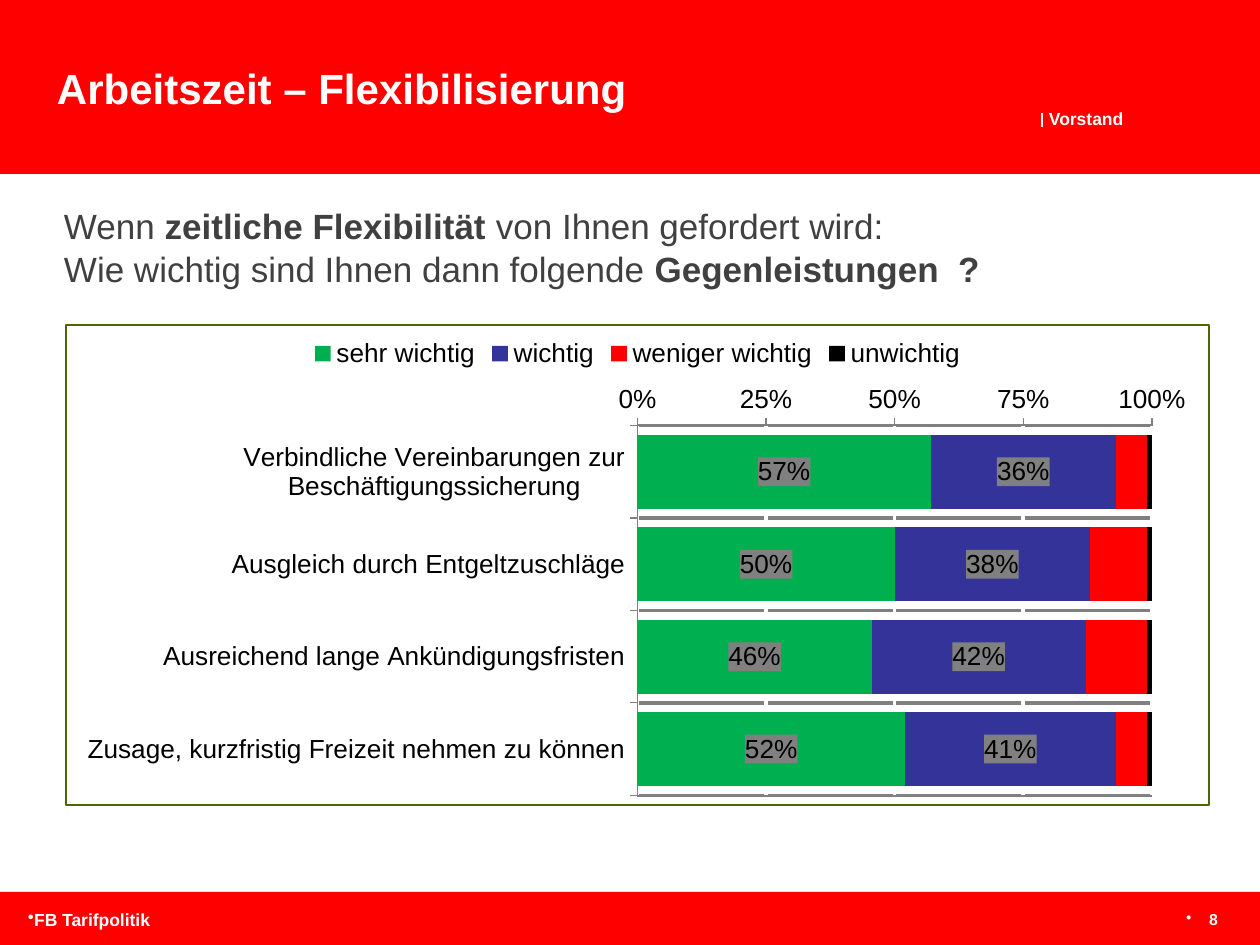
from dataclasses import dataclass

from lxml import etree
from pptx import Presentation
from pptx.chart.data import CategoryChartData
from pptx.dml.color import RGBColor
from pptx.enum.chart import (XL_CHART_TYPE, XL_LABEL_POSITION, XL_LEGEND_POSITION,
                             XL_TICK_LABEL_POSITION, XL_TICK_MARK)
from pptx.enum.shapes import MSO_CONNECTOR, MSO_SHAPE
from pptx.enum.text import PP_ALIGN
from pptx.oxml import parse_xml
from pptx.oxml.ns import nsdecls, qn
from pptx.util import Pt

EMU_PER_PX = 914400 / 126
STACKED_100 = XL_CHART_TYPE.BAR_STACKED_100
LEGEND_TOP = XL_LEGEND_POSITION.TOP
LABEL_CENTER = XL_LABEL_POSITION.CENTER
TICKS_LOW = XL_TICK_LABEL_POSITION.LOW
TICK_OUT, TICK_NONE = XL_TICK_MARK.OUTSIDE, XL_TICK_MARK.NONE
LEFT, RIGHT = PP_ALIGN.LEFT, PP_ALIGN.RIGHT
RECTANGLE, STRAIGHT = MSO_SHAPE.RECTANGLE, MSO_CONNECTOR.STRAIGHT


@dataclass(frozen=True)
class Theme:
    font: str = "Arial"
    red: str = "FF0000"
    white: str = "FFFFFF"
    question: str = "404040"
    black: str = "000000"
    green: str = "00B050"
    blue: str = "333399"
    grey: str = "808080"
    frame: str = "4C6600"
    title_size: int = 24
    question_size: int = 20
    chart_size: int = 15
    small_size: int = 10
    page_size: int = 9


THEME = Theme()

CATEGORIES = [
    "Verbindliche Vereinbarungen zur Beschäftigungssicherung",
    "Ausgleich durch Entgeltzuschläge",
    "Ausreichend lange Ankündigungsfristen",
    "Zusage, kurzfristig Freizeit nehmen zu können",
]
# name, values, colour, labelled
RATINGS = [
    ("sehr wichtig", (0.57, 0.50, 0.46, 0.52), THEME.green, True),
    ("wichtig", (0.36, 0.38, 0.42, 0.41), THEME.blue, True),
    ("weniger wichtig", (0.06, 0.11, 0.12, 0.06), THEME.red, False),
    ("unwichtig", (0.01, 0.01, 0.01, 0.01), THEME.black, False),
]


def px(*lengths):
    return [round(length * EMU_PER_PX) for length in lengths]


def apply_format(target, **values):
    for name, value in values.items():
        setattr(target, name, value)


def set_font(font, size, color, bold=False):
    apply_format(font, name=THEME.font, size=Pt(size), bold=bold)
    font.color.rgb = RGBColor.from_string(color)


def set_line(line, color, width):
    line.color.rgb = RGBColor.from_string(color)
    line.width = Pt(width)


def add_band(slide, top, height):
    band = slide.shapes.add_shape(RECTANGLE, *px(0, top, 1260, height))
    band.shadow.inherit = False
    band.fill.solid()
    band.fill.fore_color.rgb = RGBColor.from_string(THEME.red)
    band.line.fill.background()


def add_divider(slide, x, top, bottom):
    divider = slide.shapes.add_connector(STRAIGHT, *px(x, top, x, bottom))
    set_line(divider.line, THEME.white, 0.8)
    etree.SubElement(divider._element.spPr, qn("a:effectLst"))


def add_text(slide, box, lines, size, color=THEME.white, spacing=None,
             align=LEFT, insets=(0, 0), wrap=False, bullet_indent=None):
    """Each line is a list of (text, bold) pieces."""
    frame = slide.shapes.add_textbox(*px(*box)).text_frame
    side, edge = px(*insets)
    apply_format(frame, word_wrap=wrap, margin_left=side, margin_right=side,
                 margin_top=edge, margin_bottom=edge)
    paragraph = frame.paragraphs[0]
    apply_format(paragraph, alignment=align, line_spacing=spacing and Pt(spacing))
    if bullet_indent is not None:
        properties = paragraph._p.get_or_add_pPr()
        indent = px(bullet_indent)[0]
        properties.set("marL", str(indent))
        properties.set("indent", str(-indent))
        etree.SubElement(properties, qn("a:buChar"), char="•")
    for number, pieces in enumerate(lines):
        if number:
            paragraph.add_line_break()
        for text, bold in pieces:
            run = paragraph.add_run()
            run.text = text
            set_font(run.font, size, color, bold)


def chart_fill(color, border=""):
    return parse_xml(f'<c:spPr {nsdecls("c", "a")}><a:solidFill><a:srgbClr val="{color}"/>'
                     f'</a:solidFill>{border}</c:spPr>')


def add_labels(series):
    labels = series.data_labels
    apply_format(labels, show_value=True, number_format="0%",
                 number_format_is_linked=False, position=LABEL_CENTER)
    set_font(labels.font, THEME.chart_size, THEME.black)
    labels._element.find(qn("c:numFmt")).addnext(chart_fill(THEME.grey))


def format_axes(chart):
    shares, answers = chart.value_axis, chart.category_axis
    apply_format(shares, minimum_scale=0, maximum_scale=1, major_unit=0.25)
    apply_format(shares.tick_labels, number_format="0%", number_format_is_linked=False)
    apply_format(answers, reverse_order=True, tick_label_position=TICKS_LOW)
    for axis, color in ((shares, THEME.white), (answers, THEME.grey)):
        apply_format(axis, major_tick_mark=TICK_OUT, minor_tick_mark=TICK_NONE,
                     has_major_gridlines=True)
        set_line(axis.major_gridlines.format.line, color, 2)
        set_line(axis.format.line, THEME.grey, 0.75)
        set_font(axis.tick_labels.font, THEME.chart_size, THEME.black)


def place_plot(chart, **fractions):
    plot_area = chart._chartSpace.chart.plotArea
    for old in plot_area.findall(qn("c:layout")):
        plot_area.remove(old)
    values = "".join(f'<c:{key} val="{value}"/>' for key, value in fractions.items())
    plot_area.insert(0, parse_xml(
        f'<c:layout {nsdecls("c")}><c:manualLayout><c:layoutTarget val="inner"/>'
        f'<c:xMode val="edge"/><c:yMode val="edge"/>{values}</c:manualLayout></c:layout>'))


def add_rating_chart(slide, box):
    data = CategoryChartData(number_format="0%")
    data.categories = CATEGORIES
    for name, values, _, _ in RATINGS:
        data.add_series(name, values)
    chart = slide.shapes.add_chart(STACKED_100, *px(*box), data).chart
    apply_format(chart, has_title=False, has_legend=True)
    set_font(chart.font, THEME.chart_size, THEME.black)
    apply_format(chart.legend, position=LEGEND_TOP, include_in_layout=False)
    set_font(chart.legend.font, THEME.chart_size, THEME.black)

    plot = chart.plots[0]
    apply_format(plot, gap_width=25, overlap=100, vary_by_categories=False)
    for series, (_, _, color, labelled) in zip(plot.series, RATINGS):
        series.format.fill.solid()
        series.format.fill.fore_color.rgb = RGBColor.from_string(color)
        if labelled:
            add_labels(series)
    format_axes(chart)
    place_plot(chart, x=0.5, y=0.21, w=0.45, h=0.77)

    border = (f'<a:ln w="{Pt(1)}"><a:solidFill><a:srgbClr val="{THEME.frame}"/>'
              '</a:solidFill></a:ln>')
    chart._chartSpace.chart.addnext(chart_fill(THEME.white, border))


def main():
    deck = Presentation()
    deck.slide_width, deck.slide_height = px(1260, 945)
    slide = deck.slides.add_slide(deck.slide_layouts[6])

    # Header and footer bands
    add_band(slide, 892, 53)
    add_band(slide, 0, 174)
    add_text(slide, (1049, 110, 77, 19), [[("Vorstand", True)]], THEME.small_size, spacing=11)
    add_divider(slide, 1042, 113, 127)
    add_text(slide, (1185, 908, 33, 21), [[("8", True)]], THEME.page_size,
             spacing=12, align=RIGHT, bullet_indent=23)
    add_text(slide, (28, 909, 160, 21), [[("FB Tarifpolitik", True)]], THEME.small_size,
             spacing=12, wrap=True, bullet_indent=0)

    # Title and question
    add_text(slide, (44, 57, 600, 63), [[("Arbeitszeit – Flexibilisierung", True)]],
             THEME.title_size, insets=(13, 6))
    question = [
        [("Wenn ", False), ("zeitliche Flexibilität ", True),
         ("von Ihnen gefordert wird:", False)],
        [("Wie wichtig sind Ihnen dann folgende ", False), ("Gegenleistungen  ?", True)],
    ]
    add_text(slide, (64, 205, 1144, 84), question, THEME.question_size,
             THEME.question, spacing=24, wrap=True)

    # Ratings of what is offered in return
    add_rating_chart(slide, (65, 324, 1145, 482))
    deck.save("out.pptx")


if __name__ == "__main__":
    main()
